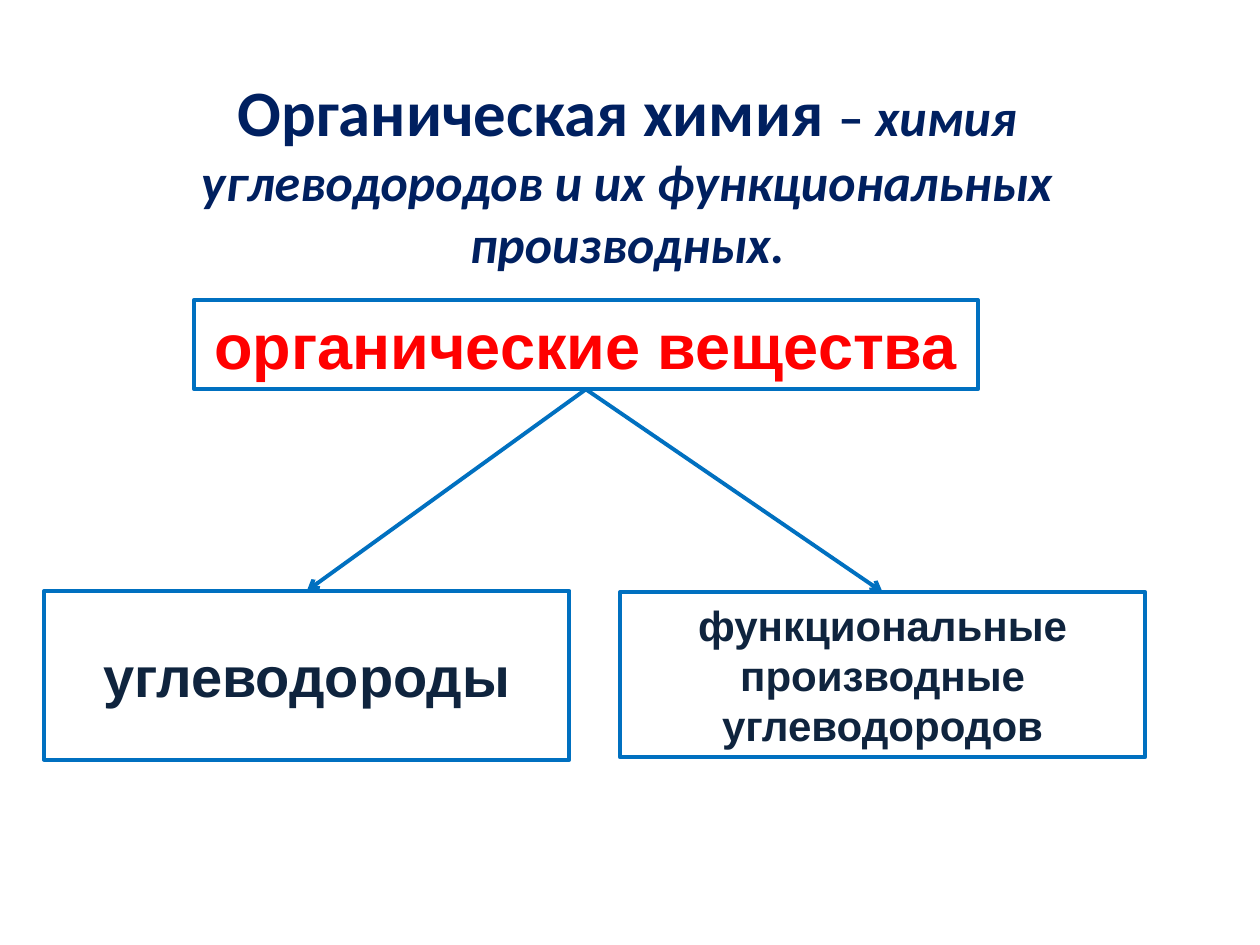
import pptx
import pptx.util
import pptx.dml.color
import pptx.enum.shapes
import pptx.enum.text
import pptx.oxml.ns
from dataclasses import dataclass
from lxml import etree

Inches = pptx.util.Inches
Pt = pptx.util.Pt


@dataclass(frozen=True)
class Theme:
    navy: str = "002060"
    dark: str = "0F243E"
    red: str = "FF0000"
    blue: str = "0070C0"
    head: str = "Calibri"
    body: str = "Arial"
    title: float = 37
    sub: float = 29.6
    root: float = 36
    large: float = 32
    small: float = 24
    line: float = 2.25


THEME = Theme()


def color(code):
    return pptx.dml.color.RGBColor.from_string(code)


def write(para, text, *, size, font, ink, italic=False):
    """Add one bold run to a centred paragraph."""
    para.alignment = pptx.enum.text.PP_ALIGN.CENTER
    run = para.add_run()
    run.text = text
    run.font.name = font
    run.font.size = Pt(size)
    run.font.bold = True
    run.font.italic = italic
    run.font.color.rgb = color(ink)


def add_title(slide, left, top, width, height):
    title = slide.shapes.title
    title.left, title.top = Inches(left), Inches(top)
    title.width, title.height = Inches(width), Inches(height)
    frame = title.text_frame
    frame.word_wrap = True
    frame.auto_size = pptx.enum.text.MSO_AUTO_SIZE.NONE
    frame.vertical_anchor = pptx.enum.text.MSO_ANCHOR.TOP
    frame.margin_left = frame.margin_right = Inches(0.2)
    para = frame.paragraphs[0]
    look = dict(font=THEME.head, ink=THEME.navy)
    write(para, "Органическая химия ", size=THEME.title, **look)
    write(para, "– ", size=THEME.sub, **look)
    write(para, "химия углеводородов и их функциональных производных.",
          size=THEME.sub, italic=True, **look)


def add_box(slide, text, left, top, width, height, *, size, ink):
    box = slide.shapes.add_shape(
        pptx.enum.shapes.MSO_SHAPE.RECTANGLE,
        Inches(left), Inches(top), Inches(width), Inches(height))
    box.shadow.inherit = False
    box.fill.background()
    box.line.color.rgb = color(THEME.blue)
    box.line.width = Pt(THEME.line)
    frame = box.text_frame
    frame.word_wrap = True
    frame.vertical_anchor = pptx.enum.text.MSO_ANCHOR.MIDDLE
    write(frame.paragraphs[0], text, size=size, font=THEME.body, ink=ink)
    return box


def add_arrow(slide, start, end):
    """Join the bottom of one box to the top of another."""
    arrow = slide.shapes.add_connector(
        pptx.enum.shapes.MSO_CONNECTOR.STRAIGHT, 0, 0, 0, 0)
    arrow.begin_connect(start, 2)
    arrow.end_connect(end, 0)
    arrow.line.color.rgb = color(THEME.blue)
    arrow.line.width = Pt(THEME.line)
    qn = pptx.oxml.ns.qn
    etree.SubElement(arrow.line._get_or_add_ln(), qn("a:tailEnd"), type="arrow")
    etree.SubElement(arrow._element.spPr, qn("a:effectLst"))


def add_tree(slide, left, top):
    # Root class
    root = add_box(slide, "органические вещества", left + 1.19, top, 6.22, 0.71,
                   size=THEME.root, ink=THEME.red)
    # Two branches: text, left, top, height, size
    kinds = [
        ("углеводороды", 0, 2.31, 1.34, THEME.large),
        ("функциональные производные углеводородов", 4.57, 2.32, 1.31, THEME.small),
    ]
    for text, x, y, height, size in kinds:
        leaf = add_box(slide, text, left + x, top + y, 4.17, height,
                       size=size, ink=THEME.dark)
        add_arrow(slide, root, leaf)


def main():
    deck = pptx.Presentation()
    deck.slide_width, deck.slide_height = Inches(10), Inches(7.5)
    slide = deck.slides.add_slide(deck.slide_layouts[5])
    add_title(slide, 0.47, 0.52, 9.02, 1.65)
    add_tree(slide, 0.35, 2.38)
    deck.save("out.pptx")


if __name__ == "__main__":
    main()
